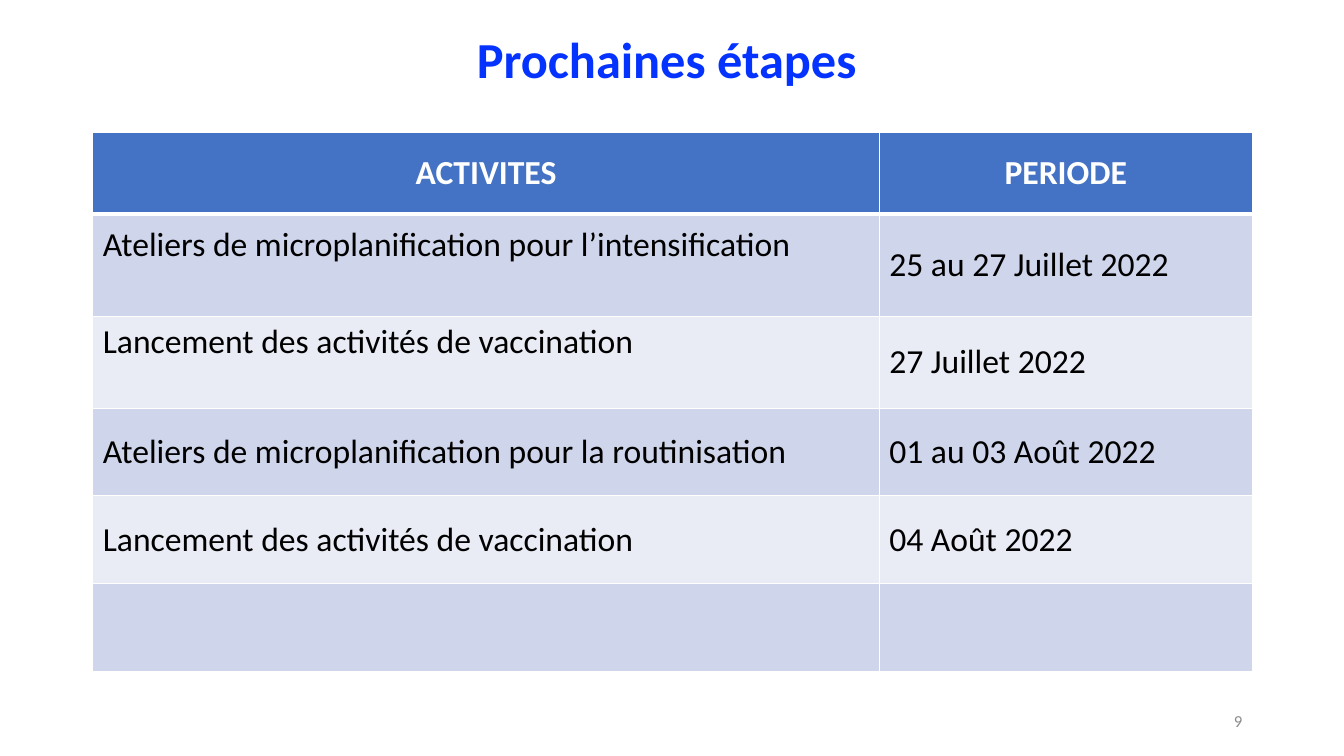
from dataclasses import dataclass

from lxml import etree
from pptx import Presentation
from pptx.dml.color import RGBColor
from pptx.enum.text import MSO_ANCHOR, PP_ALIGN
from pptx.oxml.ns import qn
from pptx.util import Inches, Pt

LEFT, CENTER, RIGHT = PP_ALIGN.LEFT, PP_ALIGN.CENTER, PP_ALIGN.RIGHT
MIDDLE = MSO_ANCHOR.MIDDLE

TITLE = "Prochaines étapes "
PAGE_NUMBER = "9"
HEADINGS = ("ACTIVITES", "PERIODE")
STEPS = [
    ("Ateliers de microplanification pour l’intensification", "25 au 27 Juillet 2022"),
    ("Lancement des activités de vaccination", "27 Juillet 2022"),
    ("Ateliers de microplanification pour la routinisation", "01 au 03 Août 2022"),
    ("Lancement des activités de vaccination", "04 Août 2022"),
    ("", ""),
]
RAISED_STEPS = (1, 2)  # table rows whose activity sits one line higher


@dataclass(frozen=True)
class Theme:
    font: str = "Calibri"
    title: str = "0432FF"
    header: str = "4472C4"
    bands: tuple = ("E9EBF5", "CFD5EA")
    light: str = "FFFFFF"
    dark: str = "000000"
    muted: str = "8C8C8C"
    title_size: int = 36
    table_size: int = 24
    number_size: int = 12


THEME = Theme()
SLIDE_W, SLIDE_H = 13.33, 7.5
MARGIN = 0.92
CONTENT_W = 11.5
NUMBER_W = 3
TABLE_TOP = 1.31
COLUMNS = (7.8, 3.7)
ROWS = (0.81, 1.02, 0.91) + (0.87,) * 3
RAISED_BOTTOM = 0.45


def write(frame, text, size, color, align, bold=False):
    paragraph = frame.paragraphs[0]
    paragraph.alignment = align
    run = paragraph.add_run()
    run.text = text
    run.font.name = THEME.font
    run.font.size = Pt(size)
    run.font.bold = bold
    run.font.color.rgb = RGBColor.from_string(color)
    return paragraph


def add_label(slide, box, *text_style):
    frame = slide.shapes.add_textbox(*map(Inches, box)).text_frame
    frame.word_wrap = True
    frame.vertical_anchor = MIDDLE
    return write(frame, *text_style)


def set_borders(cell, widths):
    """Draw light borders; widths are points for left, right, top, bottom."""
    properties = cell._tc.get_or_add_tcPr()
    for side, width in zip("LRTB", widths):
        line = etree.SubElement(properties, qn(f"a:ln{side}"), w=str(Pt(width)))
        fill = etree.SubElement(line, qn("a:solidFill"))
        etree.SubElement(fill, qn("a:srgbClr"), val=THEME.light)


def add_steps_table(slide):
    box = (MARGIN, TABLE_TOP, CONTENT_W, sum(ROWS))
    table = slide.shapes.add_table(len(ROWS), len(COLUMNS), *map(Inches, box)).table
    for column, width in zip(table.columns, COLUMNS):
        column.width = Inches(width)
    for row, height in zip(table.rows, ROWS):
        row.height = Inches(height)

    for r, entries in enumerate([HEADINGS, *STEPS]):
        is_header = r == 0
        top = 3 if r == 1 else 1
        bottom = 3 if is_header else 1
        for c, entry in enumerate(entries):
            cell = table.cell(r, c)
            set_borders(cell, (1, 1, top, bottom))
            cell.fill.solid()
            band = THEME.header if is_header else THEME.bands[r % 2]
            cell.fill.fore_color.rgb = RGBColor.from_string(band)
            cell.vertical_anchor = MIDDLE
            if c == 0 and r in RAISED_STEPS:
                cell.margin_bottom = Inches(RAISED_BOTTOM)
            if entry:
                write(cell.text_frame, entry, THEME.table_size,
                      THEME.light if is_header else THEME.dark,
                      CENTER if is_header else LEFT, is_header)


def main():
    deck = Presentation()
    deck.slide_width, deck.slide_height = Inches(SLIDE_W), Inches(SLIDE_H)
    slide = deck.slides.add_slide(deck.slide_layouts[6])

    title = add_label(slide, (MARGIN, 0.23, CONTENT_W, 0.77), TITLE,
                      THEME.title_size, THEME.title, CENTER, True)
    title.line_spacing = 0.9
    number_left = MARGIN + CONTENT_W - NUMBER_W
    add_label(slide, (number_left, 6.95, NUMBER_W, 0.4), PAGE_NUMBER,
              THEME.number_size, THEME.muted, RIGHT)
    add_steps_table(slide)
    deck.save("out.pptx")


if __name__ == "__main__":
    main()
